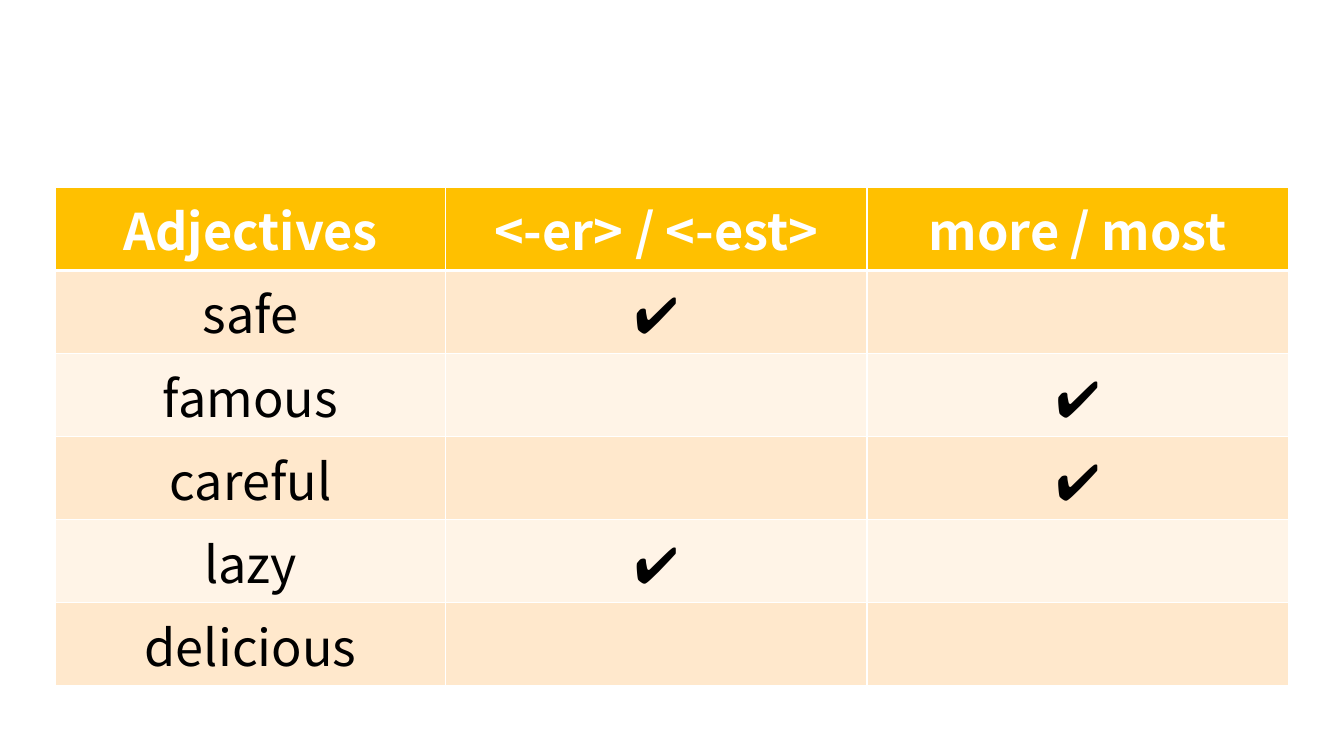
from lxml.etree import SubElement
from pptx import Presentation
from pptx.dml.color import RGBColor
from pptx.enum.text import MSO_ANCHOR, PP_ALIGN
from pptx.oxml.ns import qn
from pptx.util import Emu, Pt

PX = 9144  # 100 px to the inch
FONT = "Noto Sans CJK JP"
WHITE, BLACK, AMBER = "FFFFFF", "000000", "FFC000"
BANDS = ["FFE8CC", "FFF4E7"]
CHECK = "✔"
HEADINGS = ["Adjectives", "<-er> / <-est>", "more / most"]
ADJECTIVES = [
    ("safe", CHECK, ""),
    ("famous", "", CHECK),
    ("careful", "", CHECK),
    ("lazy", CHECK, ""),
    ("delicious", "", ""),
]


def px(n):
    return Emu(n * PX)


def color(value):
    return RGBColor.from_string(value)


def write(tf, text, size=36, fill=BLACK, bold=False):
    p = tf.paragraphs[0]
    p.alignment = PP_ALIGN.CENTER
    p.font.size = Pt(size)
    if text:
        r = p.add_run()
        r.text = text
        r.font.name = FONT
        r.font.size = Pt(size)
        r.font.bold = bold
        r.font.color.rgb = color(fill)


def set_borders(cell, **widths):
    """Draw white borders; widths maps L, R, T, B to points."""
    tc_pr = cell._tc.get_or_add_tcPr()
    for i, side in enumerate("LRTB"):
        ln = SubElement(tc_pr, qn(f"a:ln{side}"), w=str(Pt(widths.get(side, 1))))
        SubElement(SubElement(ln, qn("a:solidFill")), qn("a:srgbClr"), val=WHITE)
        tc_pr.insert(i, ln)


def add_adjective_table(slide, left, top, col_widths, row_height):
    rows = [HEADINGS, *ADJECTIVES]
    frame = slide.shapes.add_table(
        len(rows), len(col_widths), px(left), px(top),
        px(sum(col_widths)), px(row_height * len(rows)))
    table = frame.table
    for column, width in zip(table.columns, col_widths):
        column.width = px(width)
    for i, texts in enumerate(rows):
        header = i == 0
        for j, text in enumerate(texts):
            cell = table.cell(i, j)
            cell.vertical_anchor = MSO_ANCHOR.TOP
            cell.fill.solid()
            cell.fill.fore_color.rgb = color(AMBER if header else BANDS[(i - 1) % 2])
            set_borders(cell, T=3 if i == 1 else 1, B=3 if header else 1)
            write(cell.text_frame, text, fill=WHITE if header else BLACK, bold=header)


def main():
    prs = Presentation()
    prs.slide_width, prs.slide_height = px(1333), px(750)
    slide = prs.slides.add_slide(prs.slide_layouts[6])
    add_adjective_table(slide, 55, 186, [387, 418, 418], 82)
    prs.save("out.pptx")


if __name__ == "__main__":
    main()
